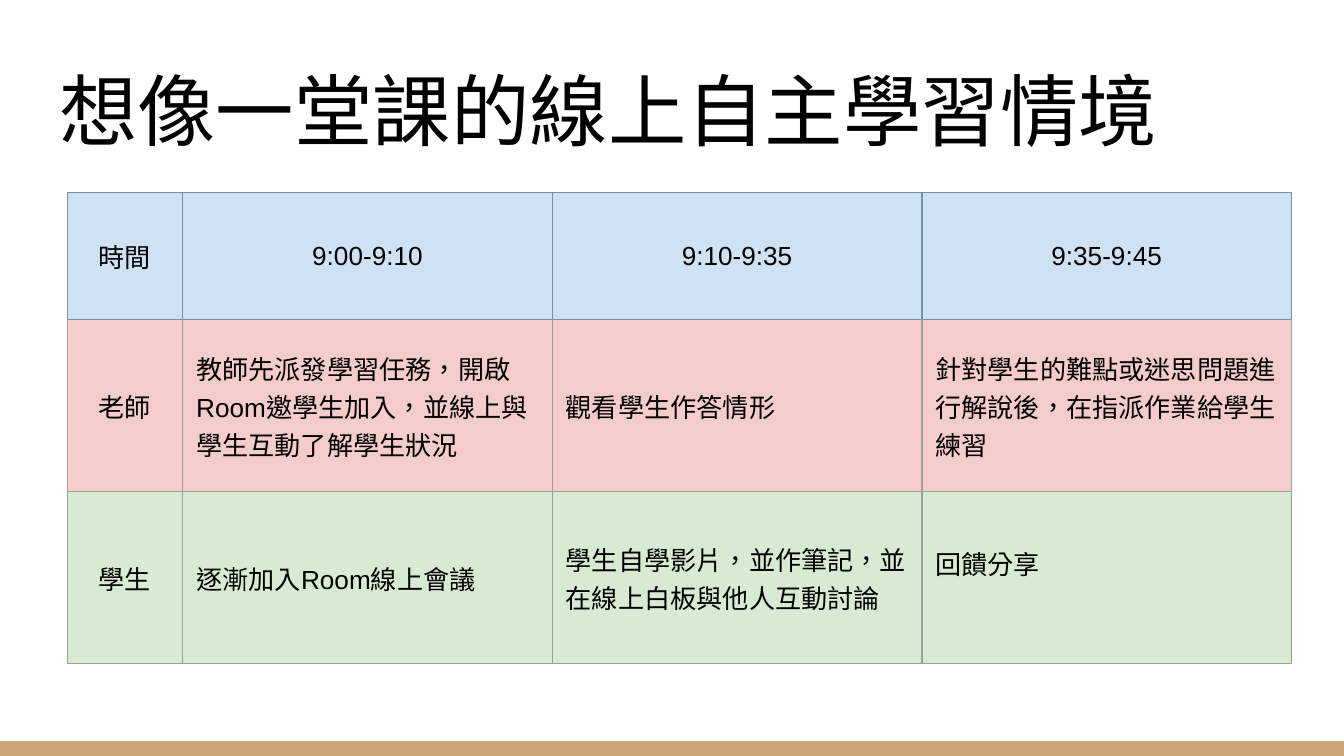
import pptx
import pptx.util
import pptx.dml.color
import pptx.enum.lang
import pptx.enum.shapes
import pptx.enum.text
import pptx.oxml.ns
import lxml.etree

Inches = pptx.util.Inches
Align = pptx.enum.text.PP_ALIGN
Anchor = pptx.enum.text.MSO_ANCHOR

WIDE = 10
HIGH = WIDE * 9 / 16
INK, BAR, SLATE, GREY = "000000", "CCA677", "78909C", "9E9E9E"
WIDTHS = [0.86, 2.75, 2.75, 2.75]
ROWS = [
    (0.95, "CFE2F3", SLATE, SLATE,
     ["時間", "9:00-9:10", "9:10-9:35", "9:35-9:45"]),
    (1.28, "F4CCCC", GREY, SLATE,
     ["老師", "教師先派發學習任務，開啟Room邀學生加入，並線上與學生互動了解學生狀況",
      "觀看學生作答情形", "針對學生的難點或迷思問題進行解說後，在指派作業給學生練習"]),
    (1.28, "D9EAD3", GREY, GREY,
     ["學生", "逐漸加入Room線上會議",
      "學生自學影片，並作筆記，並在線上白板與他人互動討論", "回饋分享"]),
]


def color(code):
    """Turn a hex string into a colour."""
    return pptx.dml.color.RGBColor.from_string(code)


def add_run(para, text, size, font):
    """Add one formatted run to a paragraph."""
    run = para.add_run()
    run.text = text
    run.font.size = pptx.util.Pt(size)
    run.font.name = font
    run.font.bold = False
    run.font.language_id = pptx.enum.lang.MSO_LANGUAGE_ID.TRADITIONAL_CHINESE
    run.font.color.rgb = color(INK)


def inset(item, size=0.1):
    """Set equal margins on a cell or text frame."""
    item.margin_left = item.margin_right = Inches(size)
    item.margin_top = item.margin_bottom = Inches(size)


def border(cell, side, code):
    """Draw one side of a cell."""
    props = cell._tc.get_or_add_tcPr()
    name = pptx.oxml.ns.qn
    line = lxml.etree.SubElement(props, name("a:ln" + side), w=str(pptx.util.Pt(0.75)))
    fill = lxml.etree.SubElement(line, name("a:solidFill"))
    lxml.etree.SubElement(fill, name("a:srgbClr"), val=code)


def add_title(slide, box, text):
    """Place the slide title in its box."""
    title = slide.shapes.title
    title.left, title.top, title.width, title.height = map(Inches, box)
    frame = title.text_frame
    frame.auto_size = pptx.enum.text.MSO_AUTO_SIZE.NONE
    frame.word_wrap = True
    frame.vertical_anchor = Anchor.BOTTOM
    inset(frame)
    para = frame.paragraphs[0]
    para.alignment = Align.LEFT
    add_run(para, text, 42, "Calibri")


def add_bar(slide, box):
    """Place the plain bar at the foot of the slide."""
    kind = pptx.enum.shapes.MSO_SHAPE.RECTANGLE
    bar = slide.shapes.add_shape(kind, *map(Inches, box))
    bar.shadow.inherit = False
    bar.fill.solid()
    bar.fill.fore_color.rgb = color(BAR)
    bar.line.fill.background()


def fill_cell(cell, text, fill, edge, top, mid):
    """Format one cell and write its text."""
    for side in "LRTB":
        border(cell, side, top if side == "T" else edge)
    cell.fill.solid()
    cell.fill.fore_color.rgb = color(fill)
    cell.vertical_anchor = Anchor.MIDDLE
    inset(cell)
    para = cell.text_frame.paragraphs[0]
    para.alignment = Align.CENTER if mid else Align.LEFT
    add_run(para, text, 14, "Arial")


def add_plan(slide, box):
    """Place the lesson timetable in its box."""
    frame = slide.shapes.add_table(len(ROWS), len(WIDTHS), *map(Inches, box))
    table = frame.table
    table.first_row = table.horz_banding = False
    for col, width in zip(table.columns, WIDTHS):
        col.width = Inches(width)
    for r, (height, fill, edge, top, texts) in enumerate(ROWS):
        table.rows[r].height = Inches(height)
        for c, text in enumerate(texts):
            fill_cell(table.cell(r, c), text, fill, edge, top, r == 0 or c == 0)
    table.cell(2, 3).margin_bottom = Inches(0.32)


def main():
    """Build and save the slide."""
    deck = pptx.Presentation()
    deck.slide_width, deck.slide_height = Inches(WIDE), Inches(HIGH)
    slide = deck.slides.add_slide(deck.slide_layouts[5])
    add_bar(slide, (0, HIGH - 0.11, WIDE, 0.11))
    add_title(slide, (0.34, 0.35, 9.32, 0.91), "想像一堂課的線上自主學習情境")
    add_plan(slide, (0.5, 1.43, sum(WIDTHS), sum(row[0] for row in ROWS)))
    deck.save("out.pptx")


if __name__ == "__main__":
    main()
